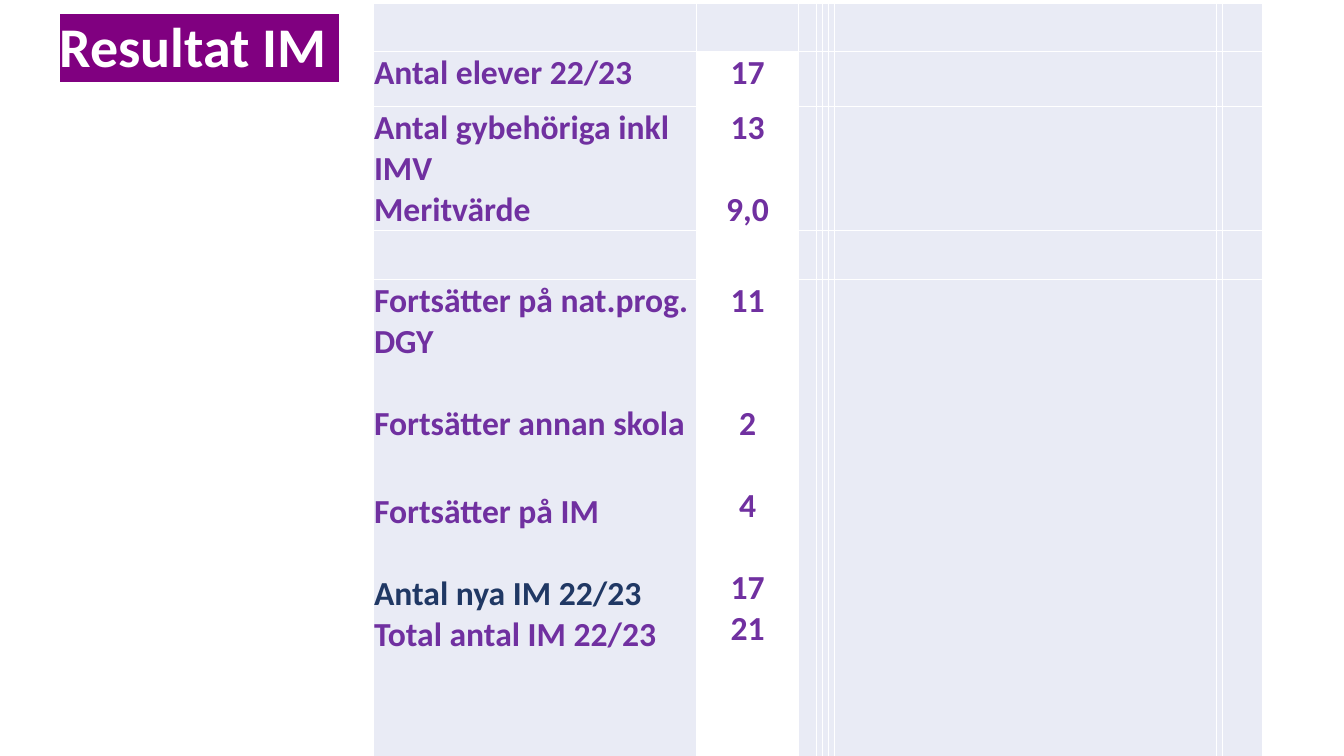
from dataclasses import dataclass

from lxml import etree
from pptx import Presentation
from pptx.dml.color import RGBColor
from pptx.enum.text import MSO_ANCHOR, PP_ALIGN
from pptx.oxml.ns import qn
from pptx.util import Inches, Pt


@dataclass(frozen=True)
class Theme:
    font: str = "Calibri"
    title_size: int = 40
    body_size: int = 24
    line_height: float = 1.22
    white: str = "FFFFFF"
    highlight: str = "800080"
    purple: str = "7030A0"
    navy: str = "203864"
    cell: str = "E9EBF5"


THEME = Theme()
COL_WIDTHS = [3.21, 1.01, 0.18, 0.04, 0.04, 0.04, 3.79, 0.04, 0.4]
ROW_HEIGHTS = [0.48, 0.55, 0.85, 0.48, 5.01, 0.18]
VALUE_COL = 1
VALUE_ROWS = range(1, 5)

# Each line: text, size in points of the gap above it, colour
LABELS = {
    1: [("Antal elever 22/23", 0, THEME.purple)],
    2: [("Antal gybehöriga inkl IMV", 0, THEME.purple),
        ("Meritvärde", 0, THEME.purple)],
    4: [("Fortsätter på nat.prog. DGY", 0, THEME.purple),
        ("Fortsätter annan skola", 24, THEME.purple),
        ("Fortsätter på IM", 28, THEME.purple),
        ("Antal nya IM 22/23", 24, THEME.navy),
        ("Total antal IM 22/23", 0, THEME.purple)],
}
VALUES = {
    1: [("17", 0, THEME.purple)],
    2: [("13", 0, THEME.purple), ("9,0", 24, THEME.purple)],
    4: [("11", 0, THEME.purple), ("2", 48, THEME.purple),
        ("4", 24, THEME.purple), ("17", 24, THEME.purple),
        ("21", 0, THEME.purple)],
}


def set_font(p, size, color):
    p.font.name = THEME.font
    p.font.size = Pt(size)
    p.font.bold = True
    p.font.color.rgb = RGBColor.from_string(color)


def highlight_run(r, color):
    mark = etree.Element(qn("a:highlight"))
    etree.SubElement(mark, qn("a:srgbClr"), val=color)
    r._r.get_or_add_rPr().insert(0, mark)


def add_title(s, text):
    title = s.shapes.title
    title.left, title.top = Inches(0.49), Inches(0)
    title.width, title.height = Inches(11.93), Inches(0.97)
    tf = title.text_frame
    tf.vertical_anchor = MSO_ANCHOR.MIDDLE
    p = tf.paragraphs[0]
    p.alignment = PP_ALIGN.LEFT
    p.line_spacing = 0.9
    r = p.add_run()
    r.text = text
    set_font(p, THEME.title_size, THEME.white)
    highlight_run(r, THEME.highlight)


def set_borders(cell, color):
    tc_pr = cell._tc.get_or_add_tcPr()
    for i, side in enumerate(("lnL", "lnR", "lnT", "lnB")):
        line = etree.Element(qn(f"a:{side}"), w=str(Pt(1)))
        fill = etree.SubElement(line, qn("a:solidFill"))
        etree.SubElement(fill, qn("a:srgbClr"), val=color)
        tc_pr.insert(i, line)


def format_cell(cell, filled):
    cell.margin_left = cell.margin_right = cell.margin_top = Inches(0.01)
    cell.margin_bottom = 0
    if filled:
        cell.fill.solid()
        cell.fill.fore_color.rgb = RGBColor.from_string(THEME.cell)
    else:
        cell.fill.background()
    set_borders(cell, THEME.white)


def write_lines(cell, lines, alignment):
    tf = cell.text_frame
    for i, (text, gap, color) in enumerate(lines):
        p = tf.add_paragraph() if i else tf.paragraphs[0]
        p.text = text
        p.alignment = alignment
        p.space_before = Pt(gap * THEME.line_height)
        set_font(p, THEME.body_size, color)


def add_result_table(s):
    table = s.shapes.add_table(
        len(ROW_HEIGHTS), len(COL_WIDTHS), Inches(3.7), Inches(0.03),
        Inches(sum(COL_WIDTHS)), Inches(sum(ROW_HEIGHTS))).table
    table.first_row = table.horz_banding = False
    for col, width in zip(table.columns, COL_WIDTHS):
        col.width = Inches(width)
    for i, (row, height) in enumerate(zip(table.rows, ROW_HEIGHTS)):
        row.height = Inches(height)
        for j, cell in enumerate(row.cells):
            format_cell(cell, j != VALUE_COL or i not in VALUE_ROWS)
        write_lines(row.cells[0], LABELS.get(i, []), PP_ALIGN.LEFT)
        write_lines(row.cells[VALUE_COL], VALUES.get(i, []), PP_ALIGN.CENTER)


def main():
    prs = Presentation()
    prs.slide_width, prs.slide_height = Inches(13.33), Inches(7.5)
    s = prs.slides.add_slide(prs.slide_layouts[5])
    add_title(s, "Resultat IM ")
    add_result_table(s)
    prs.save("out.pptx")


if __name__ == "__main__":
    main()
